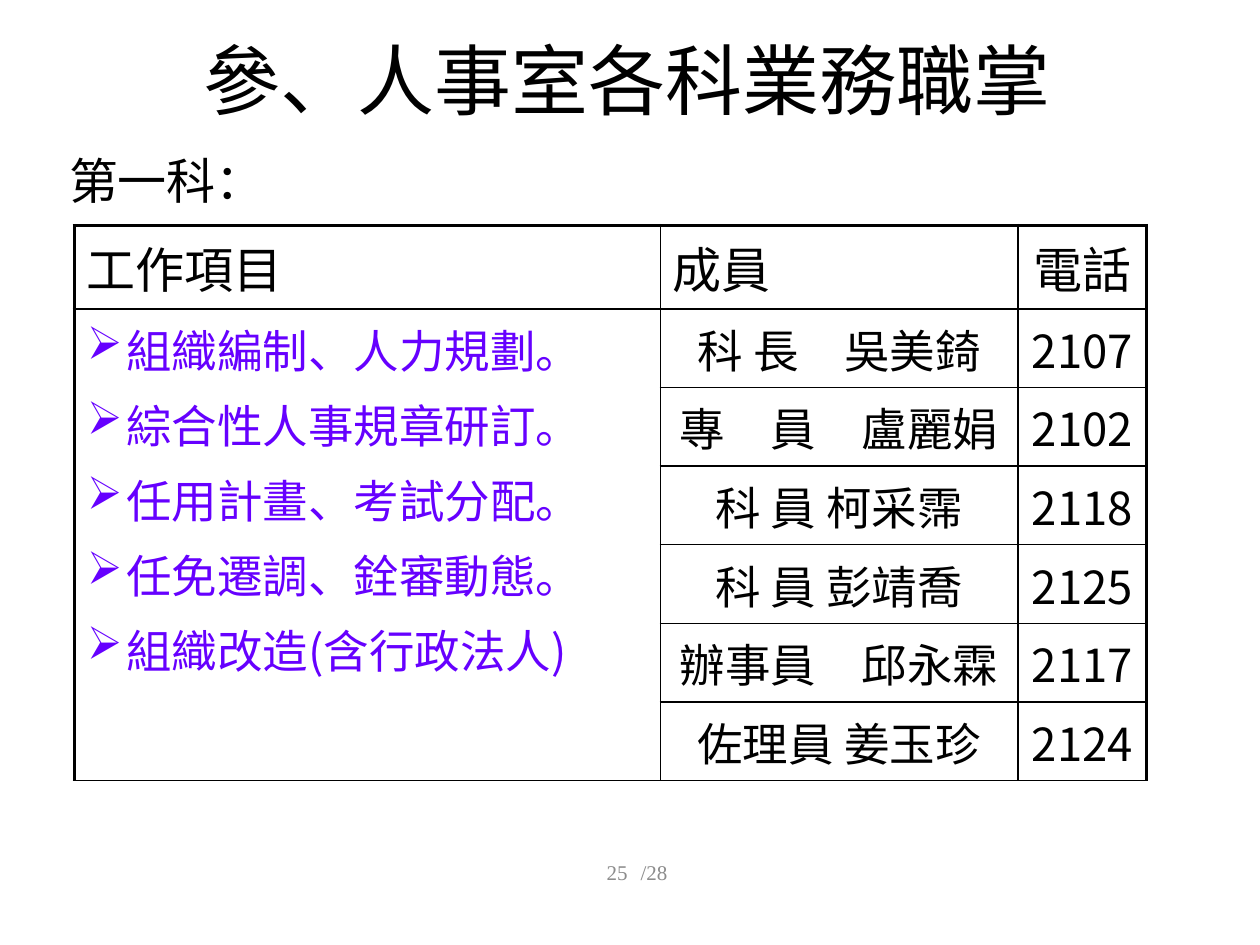
from dataclasses import dataclass

from lxml import etree
from pptx import Presentation
from pptx.dml.color import RGBColor
from pptx.enum.text import MSO_ANCHOR, PP_ALIGN
from pptx.oxml.ns import qn
from pptx.util import Inches, Pt

LEFT, CENTER, RIGHT, JUSTIFY = PP_ALIGN.LEFT, PP_ALIGN.CENTER, PP_ALIGN.RIGHT, PP_ALIGN.JUSTIFY
MIDDLE, TOP = MSO_ANCHOR.MIDDLE, MSO_ANCHOR.TOP


@dataclass(frozen=True)
class Theme:
    ink: str = "000000"
    duty: str = "6600FF"
    page: str = "8C8C8C"
    sans: str = "Noto Sans CJK SC"
    serif: str = "Times New Roman"
    title: int = 44
    heading: int = 28
    body: int = 26
    footer: int = 12
    outer: float = 2.25
    inner: float = 1


THEME = Theme()


def style(paragraph, size, color, align, face=THEME.sans):
    paragraph.alignment = align
    font = paragraph.font
    font.size = Pt(size)
    font.color.rgb = RGBColor.from_string(color)
    font.name = face
    defaults = paragraph._p.pPr.find(qn("a:defRPr"))
    etree.SubElement(defaults, qn("a:ea"), typeface=THEME.sans)


def set_borders(cell, widths):
    properties = cell._tc.get_or_add_tcPr()
    for position, (side, width) in enumerate(zip("LRTB", widths)):
        line = etree.Element(qn(f"a:ln{side}"), w=str(Pt(width)))
        fill = etree.SubElement(line, qn("a:solidFill"))
        etree.SubElement(fill, qn("a:srgbClr"), val=THEME.ink)
        properties.insert(position, line)


prs = Presentation()
prs.slide_width, prs.slide_height = Inches(10), Inches(7.5)
slide = prs.slides.add_slide(prs.slide_layouts[5])

title = slide.shapes.title
title.left, title.top, title.width, title.height = Inches(0.73), Inches(0), Inches(8.5), Inches(1.25)
title.text_frame.text = "參、人事室各科業務職掌"
title.text_frame.vertical_anchor = MIDDLE
style(title.text_frame.paragraphs[0], THEME.title, THEME.ink, CENTER)

headers = [("工作項目", JUSTIFY), ("成員", JUSTIFY), ("電話", CENTER)]
duties = [
    "組織編制、人力規劃。",
    "綜合性人事規章研訂。",
    "任用計畫、考試分配。",
    "任免遷調、銓審動態。",
    "組織改造(含行政法人)",
]
members = [
    ("科 長　吳美錡", "2107"),
    ("專　員　盧麗娟", "2102"),
    ("科 員 柯采霈", "2118"),
    ("科 員 彭靖喬", "2125"),
    ("辦事員　邱永霖", "2117"),
    ("佐理員 姜玉珍", "2124"),
]
column_widths = [4.65, 2.84, 1.02]
row_heights = [0.66] + [0.62] * len(members)
last_row, last_column = len(members), len(headers) - 1

table = slide.shapes.add_table(
    len(row_heights), len(column_widths), Inches(0.59), Inches(1.79),
    Inches(sum(column_widths)), Inches(sum(row_heights)),
).table
table.first_row = table.horz_banding = False
for column, width in zip(table.columns, column_widths):
    column.width = Inches(width)
for row, height in zip(table.rows, row_heights):
    row.height = Inches(height)

for r in range(last_row + 1):
    for c in range(last_column + 1):
        cell = table.cell(r, c)
        cell.fill.background()
        cell.vertical_anchor = MIDDLE
        on_edge = (c == 0, c == last_column, r == 0, r == last_row and c == 0)
        set_borders(cell, [THEME.outer if edge else THEME.inner for edge in on_edge])

for c, (header, align) in enumerate(headers):
    cell = table.cell(0, c)
    cell.text = header
    style(cell.text_frame.paragraphs[0], THEME.heading, THEME.ink, align)

for r, member in enumerate(members, start=1):
    for c, value in enumerate(member, start=1):
        cell = table.cell(r, c)
        cell.text = value
        style(cell.text_frame.paragraphs[0], THEME.body, THEME.ink, CENTER)

duty_cell = table.cell(1, 0)
duty_cell.merge(table.cell(last_row, 0))
duty_cell.vertical_anchor = TOP
duty_cell.text = "\n".join(duties)
for i, paragraph in enumerate(duty_cell.text_frame.paragraphs):
    if i:
        paragraph.space_before = Pt(5.2)
    properties = paragraph._p.get_or_add_pPr()
    properties.set("marL", str(Inches(0.31)))
    properties.set("indent", str(-Inches(0.31)))
    etree.SubElement(properties, qn("a:buChar"), char="➢")
    style(paragraph, THEME.body, THEME.duty, JUSTIFY)

labels = [
    ("第一科：", 0.45, 1.27, 8.5, 0.32, THEME.heading, THEME.ink, LEFT),
    ("25", 2.83, 6.72, 2.25, 0.4, THEME.footer, THEME.page, RIGHT),
    ("/28", 3.5, 6.72, 3.38, 0.4, THEME.footer, THEME.page, CENTER),
]
for text, left, top, width, height, size, color, align in labels:
    frame = slide.shapes.add_textbox(Inches(left), Inches(top), Inches(width), Inches(height)).text_frame
    frame.word_wrap = True
    frame.vertical_anchor = MIDDLE
    frame.text = text
    style(frame.paragraphs[0], size, color, align, THEME.serif)

prs.save("out.pptx")
